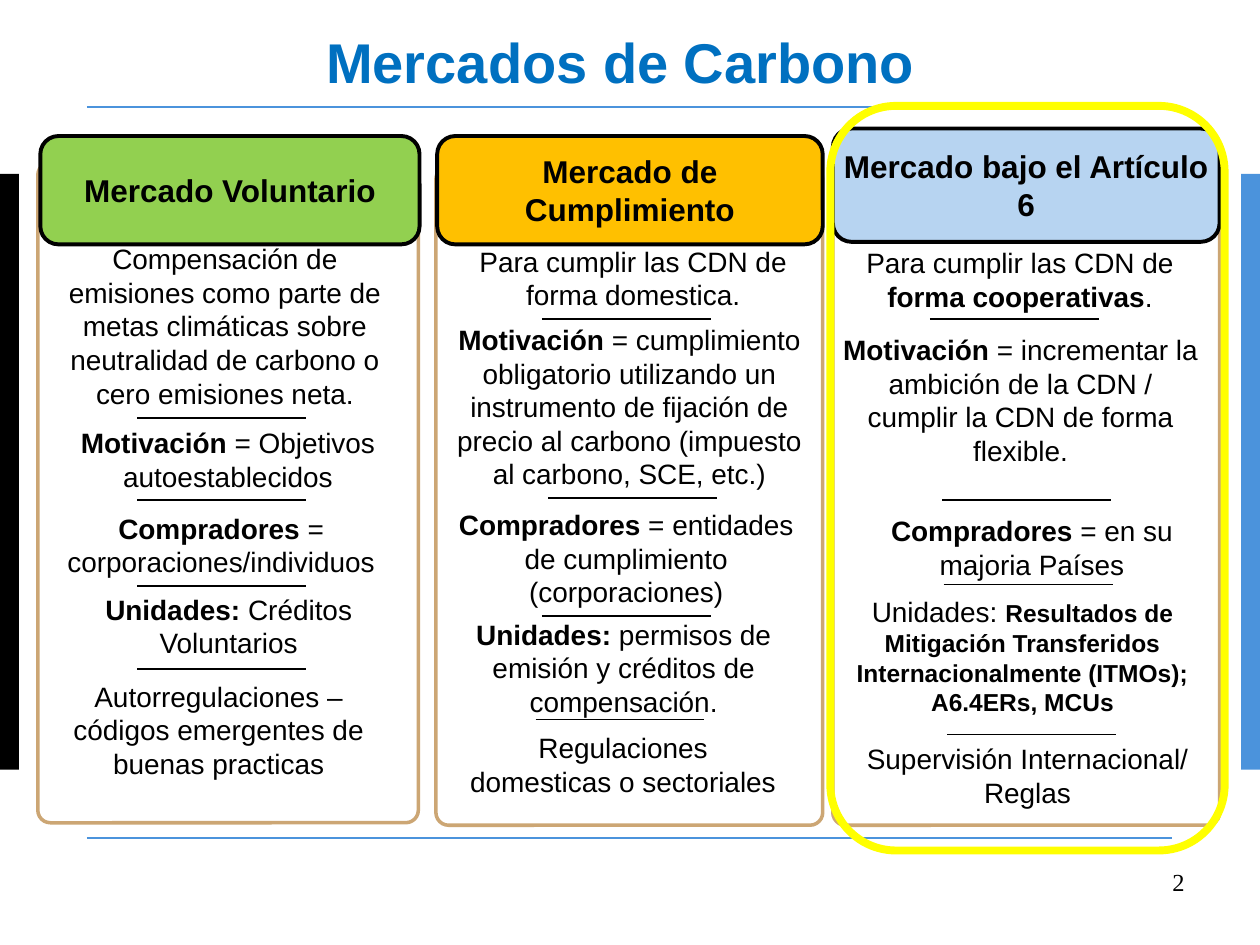
from collections import namedtuple
from dataclasses import dataclass

from lxml import etree
from pptx import Presentation
from pptx.dml import color
from pptx.enum import shapes, text
from pptx.oxml import ns
from pptx.util import Inches, Pt

COLUMNS, ROWS = 100, 75
PAGE_WIDTH, PAGE_HEIGHT = Inches(10), Inches(7.5)
RULE_WIDTH = 13.4

Box = namedtuple("Box", "left top width height")
Card = namedtuple("Card", "panel header title fill notes rules")


@dataclass(frozen=True)
class Theme:
    ink: str = "000000"
    paper: str = "FFFFFF"
    blue: str = "4B93DC"
    heading: str = "0070C0"
    panel_edge: str = "CCA674"
    green: str = "92D050"
    amber: str = "FFC000"
    sky: str = "B7D4F1"
    highlight: str = "FFFF00"
    font: str = "Arial"
    number_font: str = "Times New Roman"
    title_size: int = 32
    header_size: int = 18
    body_size: int = 16
    small_size: int = 14


THEME = Theme()


def bold(words, size=THEME.body_size):
    return words, {"strong": True, "size": size}


def plain(words):
    return words, {}


CARDS = [
    Card(
        Box(3, 12.9, 30.2, 52.4), Box(0.2, -2.1, 30.1, 8.6),
        "Mercado Voluntario", THEME.green,
        [
            (Box(-0.3, 5.8, 30.3, 14.5), [plain(
                "Compensación de emisiones como parte de metas climáticas sobre "
                "neutralidad de carbono o cero emisiones neta.")]),
            (Box(0.1, 20.4, 30, 6.4),
             [bold("Motivación "), plain("= Objetivos autoestablecidos")]),
            (Box(0.5, 27.2, 28.1, 6.4),
             [bold("Compradores"), plain(" = corporaciones/individuos")]),
            (Box(1.1, 33.6, 28.1, 6.4),
             [bold("Unidades: "), plain("Créditos Voluntarios")]),
            (Box(0.3, 40.5, 28.1, 9.1), [plain(
                "Autorregulaciones – códigos emergentes de buenas practicas")]),
        ],
        [(7.9, 20.3), (7.9, 26.8), (7.9, 33.6), (7.9, 40.2)],
    ),
    Card(
        Box(34.6, 13.2, 30.7, 52.3), Box(0.1, -2.4, 30.6, 8.6),
        "Mercado de Cumplimiento", THEME.amber,
        [
            (Box(0.4, 5.7, 30.5, 6.4),
             [plain("Para cumplir las CDN de forma domestica.")]),
            (Box(0.4, 11.9, 29.9, 14.5), [bold("Motivación"), plain(
                " = cumplimiento obligatorio utilizando un instrumento de fijación "
                "de precio al carbono (impuesto al carbono, SCE, etc.)")]),
            (Box(-0.1, 26.6, 30.4, 9.1), [bold("Compradores"), plain(
                " = entidades de cumplimiento (corporaciones)")]),
            (Box(-0.3, 35.3, 30.4, 9.1), [bold("Unidades: "), plain(
                "permisos de emisión y créditos de compensación.")]),
            (Box(1.6, 44.3, 26.5, 6.4),
             [plain("Regulaciones domesticas o sectoriales")]),
        ],
        [(8.4, 12.1), (8.9, 26.3), (8.4, 35.7), (7.9, 43.9)],
    ),
    Card(
        Box(66.1, 12.9, 30.7, 52.6), Box(0, -2.7, 30.7, 9),
        "Mercado bajo el Artículo 6", THEME.sky,
        [
            (Box(-0.4, 6.1, 30.5, 6.4),
             [plain("Para cumplir las CDN de "), bold("forma cooperativas"), plain(".")]),
            (Box(-0.4, 13, 30.6, 11.8), [bold("Motivación"), plain(
                " = incrementar la ambición de la CDN / cumplir la CDN de forma flexible.")]),
            (Box(2.8, 27.4, 26, 6.4),
             [bold("Compradores "), plain("= en su majoria Países")]),
            (Box(-0.2, 33.8, 30.5, 10.8), [plain("Unidades: "), bold(
                "Resultados de Mitigación Transferidos Internacionalmente (ITMOs); "
                "A6.4ERs, MCUs", THEME.small_size)]),
            (Box(1.4, 45.5, 28.1, 6.4), [plain("Supervisión Internacional/ Reglas")]),
        ],
        [(7.7, 12.4), (8.7, 26.8), (8.8, 33.5), (9.1, 45.4)],
    ),
]


def across(columns):
    return round(PAGE_WIDTH * columns / COLUMNS)


def down(rows):
    return round(PAGE_HEIGHT * rows / ROWS)


def place(box):
    return across(box.left), down(box.top), across(box.width), down(box.height)


def within(outer, inner):
    return inner._replace(left=outer.left + inner.left, top=outer.top + inner.top)


def rgb(value):
    return color.RGBColor.from_string(value)


def add_block(page, box, kind=shapes.MSO_SHAPE.RECTANGLE, fill=None, line=None,
              weight=1, corner=None):
    block = page.shapes.add_shape(kind, *place(box))
    block.shadow.inherit = False
    if corner is not None:
        block.adjustments[0] = corner
    if fill:
        block.fill.solid()
        block.fill.fore_color.rgb = rgb(fill)
    else:
        block.fill.background()
    if line:
        block.line.color.rgb = rgb(line)
        block.line.width = Pt(weight)
    else:
        block.line.fill.background()
    return block


def add_rule(page, left, top, width, ink=THEME.ink):
    rule = page.shapes.add_connector(
        shapes.MSO_CONNECTOR.STRAIGHT, across(left), down(top),
        across(left + width), down(top))
    rule.line.color.rgb = rgb(ink)
    rule.line.width = Pt(1)
    etree.SubElement(rule._element.spPr, ns.qn("a:effectLst"))


def write(holder, spans, size=THEME.body_size, ink=THEME.ink, font=THEME.font,
          strong=False, align=text.PP_ALIGN.CENTER, anchor=text.MSO_ANCHOR.TOP,
          inset=True, grow=False, spacing=None):
    frame = holder.text_frame
    frame.word_wrap = True
    frame.vertical_anchor = anchor
    if grow:
        frame.auto_size = text.MSO_AUTO_SIZE.SHAPE_TO_FIT_TEXT
    if not inset:
        frame.margin_left = frame.margin_right = 0
        frame.margin_top = frame.margin_bottom = 0
    para = frame.paragraphs[0]
    para.alignment = align
    if spacing:
        para.line_spacing = Pt(spacing)
    for words, style in spans:
        span = para.add_run()
        span.text = words
        span.font.name = font
        span.font.size = Pt(style.get("size", size))
        span.font.bold = style.get("strong", strong)
        span.font.color.rgb = rgb(ink)


def add_text(page, box, spans, **style):
    write(page.shapes.add_textbox(*place(box)), spans, **style)


def draw_backdrop(page, box):
    band = Box(box.left, box.top + 13.8, 1.5, 47.3)
    add_block(page, band, fill=THEME.ink)
    add_block(page, band._replace(left=box.left + box.width - band.width), fill=THEME.blue)
    for row in (8.5, 66.5):
        add_rule(page, box.left + 6.9, box.top + row, 86.1, THEME.blue)


def draw_title(page, box):
    add_text(page, box, [plain("Mercados de Carbono")], size=THEME.title_size,
             ink=THEME.heading, strong=True, anchor=text.MSO_ANCHOR.BOTTOM,
             inset=False, spacing=15)


def draw_card(page, box, card):
    rounded = shapes.MSO_SHAPE.ROUNDED_RECTANGLE
    add_block(page, box, rounded, THEME.paper, THEME.panel_edge, 2, 0.033)
    header = add_block(page, within(box, card.header), rounded, card.fill, THEME.ink, 2.25)
    write(header, [plain(card.title)], size=THEME.header_size, strong=True,
          anchor=text.MSO_ANCHOR.MIDDLE, inset=False)
    for note, spans in card.notes:
        add_text(page, within(box, note), spans, grow=True)
    for left, top in card.rules:
        add_rule(page, box.left + left, box.top + top, RULE_WIDTH)


def draw_highlight(page, box):
    add_block(page, box, shapes.MSO_SHAPE.ROUNDED_RECTANGLE, line=THEME.highlight, weight=4.5)


def draw_page_number(page, box):
    add_text(page, box, [plain("2")], size=THEME.small_size, font=THEME.number_font,
             align=text.PP_ALIGN.RIGHT)


def main():
    deck = Presentation()
    deck.slide_width, deck.slide_height = PAGE_WIDTH, PAGE_HEIGHT
    page = deck.slides.add_slide(deck.slide_layouts[6])
    draw_backdrop(page, Box(0, 0, COLUMNS, ROWS))
    draw_page_number(page, Box(71.7, 68.3, 23.3, 5.2))
    draw_title(page, Box(1.2, 1.2, 96.1, 6.3))
    for card in CARDS:
        draw_card(page, card.panel, card)
    draw_highlight(page, Box(65.9, 8.4, 31.3, 59.1))
    deck.save("out.pptx")


if __name__ == "__main__":
    main()
